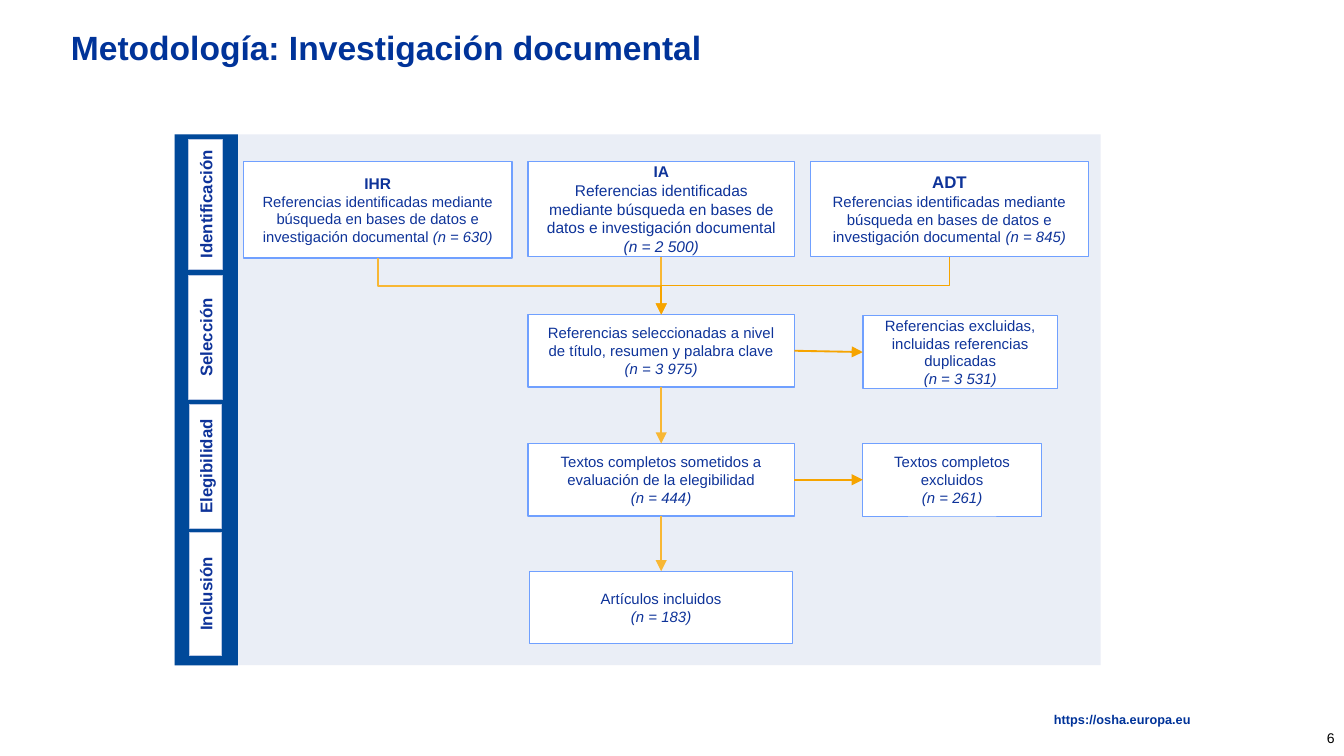
from dataclasses import dataclass
from typing import NamedTuple, Optional

from lxml.etree import SubElement
from pptx import Presentation
from pptx.dml.color import RGBColor
from pptx.enum.shapes import MSO_CONNECTOR, MSO_SHAPE
from pptx.enum.text import MSO_ANCHOR, PP_ALIGN
from pptx.oxml.ns import qn
from pptx.util import Inches, Pt


@dataclass(frozen=True)
class Theme:
    font: str = "Arial"
    title: str = "003399"
    text: str = "0E3399"
    black: str = "000000"
    white: str = "FFFFFF"
    panel: str = "EAEEF6"
    rail: str = "00499A"
    label_edge: str = "BAC8E4"
    card_edge: str = "70A0FF"
    arrow: str = "F6A400"
    soft_arrow: str = "F8B734"
    title_size: float = 18
    label_size: float = 9
    body_size: float = 8
    link_size: float = 6.8
    number_size: float = 7.5


class Frame(NamedTuple):
    left: float
    top: float
    width: float
    height: float

    @property
    def center(self) -> float:
        return self.left + self.width / 2

    @property
    def middle(self) -> float:
        return self.top + self.height / 2

    @property
    def right(self) -> float:
        return self.left + self.width

    @property
    def bottom(self) -> float:
        return self.top + self.height

    def lengths(self):
        return [Inches(value) for value in self]


THEME = Theme()


@dataclass(frozen=True)
class Card:
    frame: Frame
    body: str
    count: str
    heading: str = ""
    heading_size: float = 8.3
    body_size: float = THEME.body_size
    edge_width: float = 0.75


class Stage(NamedTuple):
    name: str
    middle: float
    length: float
    thickness: float


# Grid: column lefts and row tops, in inches
MAIN, SIDE = 3.93, 6.42
IDENTIFY, SELECT, ASSESS, INCLUDE = 1.2, 2.34, 3.3, 4.25
MAIN_WIDTH, ROW_HEIGHT, SOURCE_HEIGHT = 1.98, 0.54, 0.71
PANEL = Frame(1.3, 1, 6.89, 3.95)
RAIL_WIDTH, LABEL_CENTER = 0.47, 1.53

STAGES = [
    Stage("Identificación", 1.52, 0.97, 0.25),
    Stage("Selección", 2.51, 0.92, 0.25),
    Stage("Elegibilidad", 3.47, 0.92, 0.24),
    Stage("Inclusión", 4.42, 0.92, 0.24),
]

SOURCE_TEXT = ("Referencias identificadas mediante búsqueda en bases de datos "
               "e investigación documental ")
ADT = Card(Frame(6.03, IDENTIFY, 2.07, SOURCE_HEIGHT), SOURCE_TEXT,
           "(n = 845)", "ADT", heading_size=9)
IA = Card(Frame(MAIN, IDENTIFY, MAIN_WIDTH, SOURCE_HEIGHT), SOURCE_TEXT,
          "(n = 2 500)", "IA", body_size=8.3)
IHR = Card(Frame(1.81, IDENTIFY, 2, SOURCE_HEIGHT + 0.01), SOURCE_TEXT,
           "(n = 630)", "IHR", body_size=7.9)
SELECTED = Card(Frame(MAIN, SELECT, MAIN_WIDTH, ROW_HEIGHT),
                "Referencias seleccionadas a nivel de título, resumen y palabra clave\n",
                "(n = 3 975)")
ASSESSED = Card(Frame(MAIN, ASSESS, MAIN_WIDTH, ROW_HEIGHT),
                "Textos completos sometidos a evaluación de la elegibilidad\n",
                "(n = 444)")
INCLUDED = Card(Frame(MAIN + 0.01, INCLUDE, MAIN_WIDTH - 0.02, ROW_HEIGHT),
                "Artículos incluidos\n", "(n = 183)", edge_width=0.5)
DUPLICATES = Card(Frame(SIDE, SELECT + 0.01, 1.45, ROW_HEIGHT),
                  "Referencias excluidas,\nincluidas referencias duplicadas\n",
                  "(n = 3 531)")
EXCLUDED = Card(Frame(SIDE, ASSESS, 1.33, ROW_HEIGHT),
                "Textos completos excluidos\n", "(n = 261)", edge_width=0.5)
CARDS = [ADT, IA, IHR, SELECTED, ASSESSED, INCLUDED, DUPLICATES, EXCLUDED]


def style(para, size: float, color: str, bold: bool = False,
          align: PP_ALIGN = PP_ALIGN.CENTER) -> None:
    para.alignment = align
    para.font.name = THEME.font
    para.font.size = Pt(size)
    para.font.bold = bold
    para.font.color.rgb = RGBColor.from_string(color)


def add_span(para, text: str, italic: bool = False) -> None:
    for index, line in enumerate(text.split("\n")):
        if index:
            para.add_line_break()
        if line:
            span = para.add_run()
            span.text = line
            if italic:
                span.font.italic = True


def add_box(page, frame: Frame, fill: str, edge: Optional[str] = None,
            edge_width: float = 0.5, rotation: float = 0):
    box = page.shapes.add_shape(MSO_SHAPE.RECTANGLE, *frame.lengths())
    box.shadow.inherit = False
    box.rotation = rotation
    box.fill.solid()
    box.fill.fore_color.rgb = RGBColor.from_string(fill)
    if edge:
        box.line.color.rgb = RGBColor.from_string(edge)
        box.line.width = Pt(edge_width)
    else:
        box.line.fill.background()
    box.text_frame.word_wrap = True
    box.text_frame.vertical_anchor = MSO_ANCHOR.MIDDLE
    return box


def upright(center: float, middle: float, length: float, thickness: float) -> Frame:
    """Frame that covers the given strip once turned by 270 degrees."""
    return Frame(center - length / 2, middle - thickness / 2, length, thickness)


def add_stage(page, stage: Stage) -> None:
    frame = upright(LABEL_CENTER, stage.middle, stage.length, stage.thickness)
    box = add_box(page, frame, THEME.white, THEME.label_edge, rotation=270)
    box.text_frame.margin_left = box.text_frame.margin_right = Inches(0.07)
    para = box.text_frame.paragraphs[0]
    add_span(para, stage.name)
    style(para, THEME.label_size, THEME.text, bold=True)


def add_card(page, card: Card) -> None:
    box = add_box(page, card.frame, THEME.white, THEME.card_edge, card.edge_width)
    para = box.text_frame.paragraphs[0]
    if card.heading:
        add_span(para, card.heading)
        style(para, card.heading_size, THEME.text, bold=True)
        para = box.text_frame.add_paragraph()
    add_span(para, card.body)
    add_span(para, card.count, italic=True)
    style(para, card.body_size, THEME.text)


def add_arrow(page, start: tuple, end: tuple, color: str,
              kind: MSO_CONNECTOR = MSO_CONNECTOR.STRAIGHT):
    points = [Inches(value) for value in (*start, *end)]
    arrow = page.shapes.add_connector(kind, *points)
    arrow.line.color.rgb = RGBColor.from_string(color)
    arrow.line.width = Pt(1)
    SubElement(arrow.line._get_or_add_ln(), qn("a:tailEnd"), type="triangle")
    SubElement(arrow._element.spPr, qn("a:effectLst"))
    return arrow


def add_elbow(page, source: Frame, target: Frame, color: str) -> None:
    """Elbow that leaves downwards: a sideways elbow turned a quarter."""
    rise, run = target.top - source.bottom, target.center - source.center
    center, middle = source.center + run / 2, source.bottom + rise / 2
    rightward = run > 0
    half = -rise / 2 if rightward else rise / 2
    arrow = add_arrow(page, (center - half, middle - abs(run) / 2),
                      (center + half, middle + abs(run) / 2), color,
                      MSO_CONNECTOR.ELBOW)
    quarter_turns = 3 if rightward else 1
    arrow._element.spPr.xfrm.set("rot", str(quarter_turns * 90 * 60000))


def add_down(page, source: Frame, target: Frame) -> None:
    center = MAIN + MAIN_WIDTH / 2
    add_arrow(page, (center, source.bottom), (center, target.top), THEME.soft_arrow)


def add_across(page, source: Frame, target: Frame) -> None:
    add_arrow(page, (source.right, source.middle),
              (target.left, target.middle), THEME.arrow)


def add_text(page, frame: Frame, text: str, size: float, color: str, bold: bool,
             align: PP_ALIGN, anchor: MSO_ANCHOR, inset: tuple):
    box = page.shapes.add_textbox(*frame.lengths()).text_frame
    box.word_wrap = True
    box.vertical_anchor = anchor
    box.margin_left = box.margin_right = Inches(inset[0])
    box.margin_top = box.margin_bottom = Inches(inset[1])
    para = box.paragraphs[0]
    add_span(para, text)
    style(para, size, color, bold, align)
    return para


def main() -> None:
    deck = Presentation()
    deck.slide_width = Inches(10)
    deck.slide_height = deck.slide_width * 9 // 16
    page = deck.slides.add_slide(deck.slide_layouts[6])

    # Footer and title
    add_text(page, Frame(9.33, 5.34, 0.67, 0.3), "6", THEME.number_size, THEME.black,
             False, PP_ALIGN.RIGHT, MSO_ANCHOR.MIDDLE, (0.07, 0.04))
    link = add_text(page, Frame(2.48, 5.31, 6.38, 0.09), "https://osha.europa.eu",
                    THEME.link_size, THEME.title, True, PP_ALIGN.RIGHT,
                    MSO_ANCHOR.TOP, (0, 0))
    link.line_spacing = 0.9
    add_text(page, Frame(0.43, 0.15, 8.27, 0.4), "Metodología: Investigación documental",
             THEME.title_size, THEME.title, True, PP_ALIGN.LEFT,
             MSO_ANCHOR.MIDDLE, (0.1, 0.05))

    # Panel with the rail of stages
    add_box(page, PANEL, THEME.panel)
    rail = upright(PANEL.left + RAIL_WIDTH / 2, PANEL.middle, PANEL.height, RAIL_WIDTH)
    add_box(page, rail, THEME.rail, rotation=270)
    for stage in STAGES:
        add_stage(page, stage)

    # Flow of references
    for card in CARDS:
        add_card(page, card)
    add_elbow(page, IHR.frame, SELECTED.frame, THEME.soft_arrow)
    add_down(page, IA.frame, SELECTED.frame)
    add_elbow(page, ADT.frame, SELECTED.frame, THEME.arrow)
    add_down(page, SELECTED.frame, ASSESSED.frame)
    add_across(page, ASSESSED.frame, EXCLUDED.frame)
    add_across(page, SELECTED.frame, DUPLICATES.frame)
    add_down(page, ASSESSED.frame, INCLUDED.frame)

    deck.save("out.pptx")


if __name__ == "__main__":
    main()
